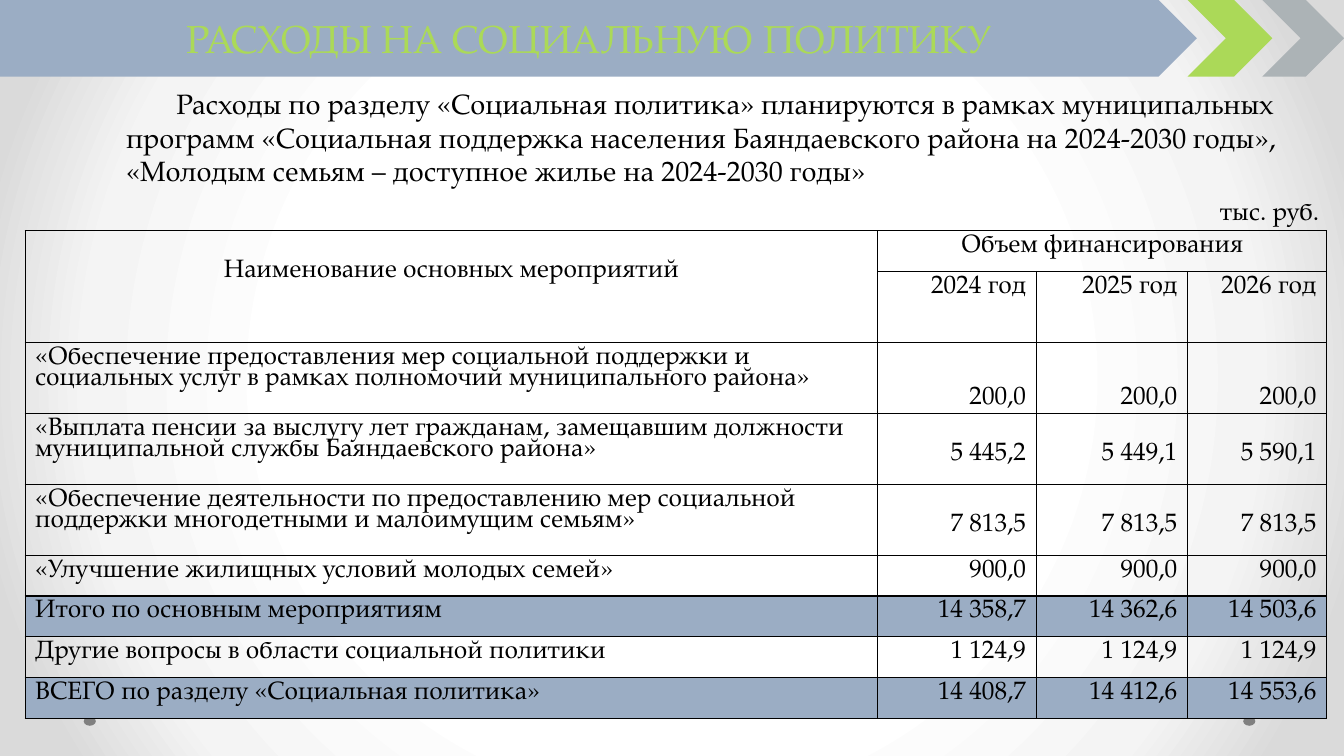
from dataclasses import dataclass

from pptx import Presentation
from pptx.dml.color import RGBColor
from pptx.enum.shapes import MSO_SHAPE as Preset
from pptx.enum.text import MSO_ANCHOR as Anchor, MSO_AUTO_SIZE as AutoSize, PP_ALIGN as Align
from pptx.oxml import parse_xml
from pptx.oxml.ns import nsdecls
from pptx.util import Inches, Pt


@dataclass(frozen=True)
class Theme:
    font: str = "TeX Gyre Pagella"
    ink: str = "000000"
    blue: str = "9BADC4"
    green: str = "ABD958"
    gray: str = "ACB3B6"
    dot: str = "808080"
    title_size: int = 28
    body_size: int = 20
    table_size: int = 18
    backdrop: tuple = ((50, "FFFFFF"), (76, "F4F4F4"), (92, "DADADA"))


def assign(target, values):
    for name, value in values.items():
        setattr(target, name, value)


class SlideBuilder:
    def __init__(self, deck, theme):
        self.deck = deck
        self.theme = theme
        self.page = deck.slides.add_slide(deck.slide_layouts[1])

    def across(self, share):
        return round(self.deck.slide_width * share / 100)

    def down(self, share):
        return round(self.deck.slide_height * share / 100)

    def area(self, left, top, width, height):
        return self.across(left), self.down(top), self.across(width), self.down(height)

    def place(self, box, shares):
        assign(box, dict(zip(("left", "top", "width", "height"), self.area(*shares))))
        tree = box.element.getparent()
        tree.append(box.element)

    def background(self):
        self.page.background.fill.solid()
        stops = "".join(
            f'<a:gs pos="{share * 1000}"><a:srgbClr val="{color}"/></a:gs>'
            for share, color in self.theme.backdrop
        )
        gradient = parse_xml(
            f'<a:gradFill {nsdecls("a")} rotWithShape="1"><a:gsLst>{stops}</a:gsLst>'
            '<a:path path="circle"><a:fillToRect l="50000" t="50000" r="50000" b="50000"/>'
            "</a:path></a:gradFill>"
        )
        solid = self.page.element.xpath(".//p:bgPr/a:solidFill")[0]
        solid.getparent().replace(solid, gradient)

    def shape(self, preset, shares, color):
        box = self.page.shapes.add_shape(preset, *self.area(*shares))
        box.shadow.inherit = False
        box.fill.solid()
        box.fill.fore_color.rgb = RGBColor.from_string(color)
        box.line.fill.background()

    def text(self, frame, text, size, color=None, align=Align.LEFT, spacing=1.0):
        para = frame.paragraphs[0]
        assign(para, {"alignment": align, "line_spacing": spacing,
                      "space_before": Pt(0), "space_after": Pt(0)})
        span = para.add_run()
        span.text = text
        assign(span.font, {"name": self.theme.font, "size": Pt(size), "bold": False})
        span.font.color.rgb = RGBColor.from_string(color or self.theme.ink)
        return para

    def title(self, text, shares):
        box = self.page.shapes.title
        self.place(box, shares)
        assign(box.text_frame, {"word_wrap": True, "auto_size": AutoSize.NONE,
                                "vertical_anchor": Anchor.MIDDLE})
        self.text(box.text_frame, text, self.theme.title_size, self.theme.green, Align.CENTER)

    def body(self, text, shares):
        box = self.page.placeholders[1]
        self.place(box, shares)
        assign(box.text_frame, {"word_wrap": True, "auto_size": AutoSize.NONE,
                                "vertical_anchor": Anchor.TOP})
        para = self.text(box.text_frame, text, self.theme.body_size)
        properties = para._p.get_or_add_pPr()
        properties.set("marL", "0")
        properties.set("indent", str(Inches(0.5)))
        properties.append(parse_xml(f'<a:buNone {nsdecls("a")}/>'))

    def label(self, text, shares):
        box = self.page.shapes.add_textbox(*self.area(*shares))
        box.text_frame.word_wrap = False
        self.text(box.text_frame, text, self.theme.table_size)

    def cell(self, cell, text, align, fill=None, lowered=False, anchor=Anchor.TOP):
        cell.vertical_anchor = anchor
        if lowered:
            cell.margin_top = Inches(0.3)
        if text:
            self.text(cell.text_frame, text, self.theme.table_size, align=align, spacing=0.83)
        properties = cell._tc.get_or_add_tcPr()
        for side in ("lnL", "lnR", "lnT", "lnB"):
            properties.append(parse_xml(
                f'<a:{side} {nsdecls("a")} w="{Pt(1)}"><a:solidFill>'
                f'<a:srgbClr val="{self.theme.ink}"/></a:solidFill></a:{side}>'
            ))
        if fill:
            cell.fill.solid()
            cell.fill.fore_color.rgb = RGBColor.from_string(fill)
        else:
            cell.fill.background()

    def table(self, records, corner, widths, heights):
        shares = (*corner, sum(widths), sum(heights))
        table = self.page.shapes.add_table(
            len(heights), len(widths), *self.area(*shares)).table
        assign(table, {"first_row": False, "horz_banding": False})
        for column, width in zip(table.columns, widths):
            column.width = self.across(width)
        for row, height in zip(table.rows, heights):
            row.height = self.down(height)
        table.cell(0, 0).merge(table.cell(1, 0))
        table.cell(0, 1).merge(table.cell(0, 3))
        for index, (texts, style) in enumerate(records):
            for place, text in enumerate(texts):
                heading = index == 0
                figure = place > 0 and not heading
                align = Align.CENTER if heading else Align.RIGHT if figure else Align.LEFT
                self.cell(
                    table.cell(index, place), text, align,
                    fill=self.theme.blue if style == "total" else None,
                    lowered=(heading and place == 0) or (figure and style == "lowered"),
                    anchor=Anchor.BOTTOM if figure and style == "bottom" else Anchor.TOP,
                )


EXPENSES = (
    (("Наименование основных мероприятий", "Объем финансирования", "", ""), "plain"),
    (("", "2024 год", "2025 год", "2026 год"), "plain"),
    (("«Обеспечение предоставления мер социальной поддержки и социальных услуг в рамках "
      "полномочий муниципального района»", "200,0", "200,0", "200,0"), "bottom"),
    (("«Выплата пенсии за выслугу лет гражданам, замещавшим должности муниципальной службы "
      "Баяндаевского района»", "5 445,2", "5 449,1", "5 590,1"), "lowered"),
    (("«Обеспечение деятельности по предоставлению мер социальной поддержки многодетными и "
      "малоимущим семьям»", "7 813,5", "7 813,5", "7 813,5"), "lowered"),
    (("«Улучшение жилищных условий молодых семей»", "900,0", "900,0", "900,0"), "plain"),
    (("Итого по основным мероприятиям", "14 358,7", "14 362,6", "14 503,6"), "total"),
    (("Другие вопросы в области социальной политики", "1 124,9", "1 124,9", "1 124,9"), "plain"),
    (("ВСЕГО по разделу «Социальная политика»", "14 408,7", "14 412,6", "14 553,6"), "total"),
)


def main():
    deck = Presentation()
    assign(deck, {"slide_width": Inches(13.33), "slide_height": Inches(7.5)})
    theme = Theme()
    builder = SlideBuilder(deck, theme)
    builder.background()
    for left in (92.5, 6.23):
        builder.shape(Preset.OVAL, (left, 94.8, 0.9, 1.2), theme.dot)
    single, double = 5.39, 9.39
    builder.table(EXPENSES, (1.87, 30.53), (63.45, 11.78, 11.25, 10.35),
                  [single] + [double] * 4 + [single] * 4)
    band = 10.13
    builder.shape(Preset.PENTAGON, (0, 0, 89.05, band), theme.blue)
    builder.shape(Preset.CHEVRON, (88.37, 0, 6.3, band), theme.green)
    builder.shape(Preset.CHEVRON, (93.92, 0, 6.08, band), theme.gray)
    builder.title("РАСХОДЫ НА СОЦИАЛЬНУЮ ПОЛИТИКУ", (0, 0, 87.62, band))
    builder.body(
        "Расходы по разделу «Социальная политика» планируются в рамках муниципальных программ "
        "«Социальная поддержка населения Баяндаевского района на 2024-2030 годы», "
        "«Молодым семьям – доступное жилье на 2024-2030 годы»", (8.63, 10.8, 90.7, 14.8))
    builder.label("тыс. руб.", (90.02, 25.2, 9.38, 5.33))
    deck.save("out.pptx")


if __name__ == "__main__":
    main()
